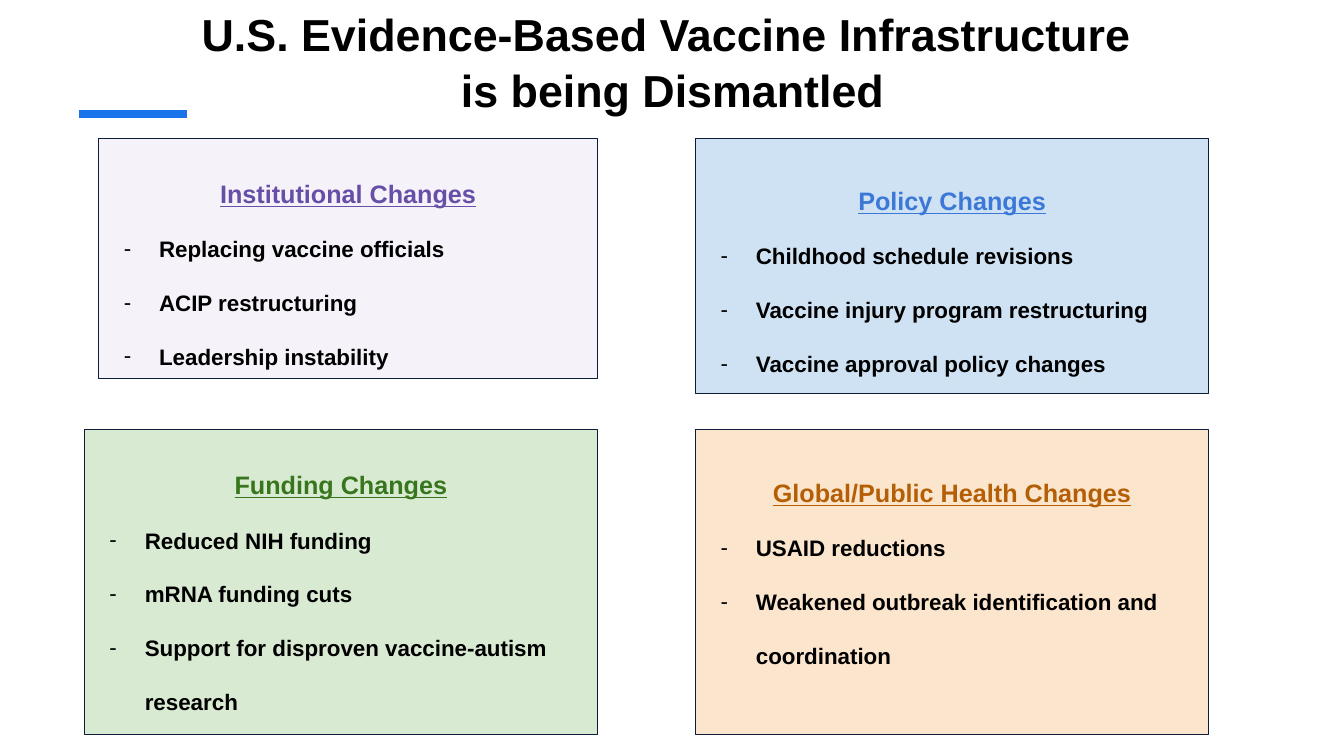
import pptx
import pptx.util
import pptx.dml.color
import pptx.enum.shapes
import pptx.enum.text
import pptx.oxml
import pptx.oxml.ns

Cm, Pt = pptx.util.Cm, pptx.util.Pt
ALIGN = pptx.enum.text.PP_ALIGN
ANCHOR = pptx.enum.text.MSO_ANCHOR

TITLE = "U.S. Evidence-Based Vaccine Infrastructure \vis being Dismantled"

# Boxes in cm: left, top, width, height
TITLE_BOX = (1.83, 0, 30.25, 3.05)
ACCENT = {"left": 1.98, "right": 4.7, "y": 2.87}

CARDS = [
    {"heading": "Institutional Changes", "theme": "institutional",
     "box": (2.49, 3.48, 12.57, 6.05), "inset_top": 0.25,
     "items": ["Replacing vaccine officials", "ACIP restructuring",
               "Leadership instability"]},
    {"heading": "Funding Changes", "theme": "funding",
     "box": (2.13, 10.82, 12.93, 7.7), "inset_top": 0.25,
     "items": ["Reduced NIH funding", "mRNA funding cuts",
               "Support for disproven vaccine-autism research"]},
    {"heading": "Policy Changes", "theme": "policy",
     "box": (17.53, 3.48, 12.93, 6.43), "inset_top": 0.43,
     "items": ["Childhood schedule revisions",
               "Vaccine injury program restructuring",
               "Vaccine approval policy changes"]},
    {"heading": "Global/Public Health Changes", "theme": "global",
     "box": (17.53, 10.82, 12.93, 7.7), "inset_top": 0.45,
     "items": ["USAID reductions",
               "Weakened outbreak identification and coordination"]},
]

THEME = {
    "font": "Arial",
    "title_size": 32, "heading_size": 18, "item_size": 16,
    "text": "000000", "accent": "1973EB", "border": "0D1C3B",
    # fill, heading colour
    "institutional": ("F5F2F9", "674EA7"),
    "funding": ("D9EAD3", "38761D"),
    "policy": ("CFE2F3", "3C78D8"),
    "global": ("FCE5CD", "B45F06"),
}


def rgb(value):
    return pptx.dml.color.RGBColor.from_string(value)


def cms(values):
    return [Cm(v) for v in values]


def set_attrs(obj, values):
    for name, value in values.items():
        setattr(obj, name, value)


def add_line(p, text, size, color, spacing, underline=False):
    """Write one bold run into paragraph p."""
    p.line_spacing = spacing
    r = p.add_run() if "\v" not in text else None
    if r is None:
        p.text = text
    else:
        r.text = text
    for r in p.runs:
        set_attrs(r.font, {"name": THEME["font"], "size": Pt(THEME[size]),
                           "bold": True, "underline": underline})
        r.font.color.rgb = rgb(color)


def add_dash(p):
    """Give paragraph p a hanging dash bullet."""
    pPr = p._p.get_or_add_pPr()
    pPr.set("marL", str(Cm(1.27)))
    pPr.set("indent", str(-Cm(0.89)))
    ns = pptx.oxml.ns.nsdecls("a")
    for xml in (
        f'<a:buClr {ns}><a:srgbClr val="{THEME["text"]}"/></a:buClr>',
        f'<a:buFont {ns} typeface="{THEME["font"]}"/>',
        f'<a:buChar {ns} char="-"/>',
    ):
        pPr.append(pptx.oxml.parse_xml(xml))


def add_title(s):
    tf = s.shapes.add_textbox(*cms(TITLE_BOX)).text_frame
    set_attrs(tf, {"word_wrap": True, "vertical_anchor": ANCHOR.MIDDLE})
    p = tf.paragraphs[0]
    p.alignment = ALIGN.CENTER
    add_line(p, TITLE, "title_size", THEME["text"], 1.05)


def add_accent(s):
    line = s.shapes.add_connector(
        pptx.enum.shapes.MSO_CONNECTOR.STRAIGHT,
        *cms((ACCENT["left"], ACCENT["y"], ACCENT["right"], ACCENT["y"])))
    line.line.color.rgb = rgb(THEME["accent"])
    line.line.width = Pt(6)
    line._element.spPr.append(pptx.oxml.parse_xml(
        f'<a:effectLst {pptx.oxml.ns.nsdecls("a")}/>'))


def add_card(s, card):
    fill, heading_color = THEME[card["theme"]]
    sp = s.shapes.add_shape(pptx.enum.shapes.MSO_SHAPE.RECTANGLE,
                            *cms(card["box"]))
    sp.shadow.inherit = False
    sp.fill.solid()
    sp.fill.fore_color.rgb = rgb(fill)
    sp.line.color.rgb = rgb(THEME["border"])
    sp.line.width = Pt(0.75)
    tf = sp.text_frame
    set_attrs(tf, {"word_wrap": True, "vertical_anchor": ANCHOR.TOP,
                   "margin_left": Cm(0.25), "margin_right": Cm(0.25),
                   "margin_top": Cm(card["inset_top"]),
                   "margin_bottom": Cm(0.25)})
    p = tf.paragraphs[0]
    p.alignment = ALIGN.CENTER
    add_line(p, card["heading"], "heading_size", heading_color, 2.0, True)
    for item in card["items"]:
        p = tf.add_paragraph()
        p.alignment = ALIGN.LEFT
        add_dash(p)
        add_line(p, item, "item_size", THEME["text"], 2.0)


def main():
    prs = pptx.Presentation()
    prs.slide_width, prs.slide_height = Cm(33.87), Cm(19.05)
    s = prs.slides.add_slide(prs.slide_layouts[6])
    add_accent(s)
    add_title(s)
    for card in CARDS:
        add_card(s, card)
    prs.save("out.pptx")


if __name__ == "__main__":
    main()
